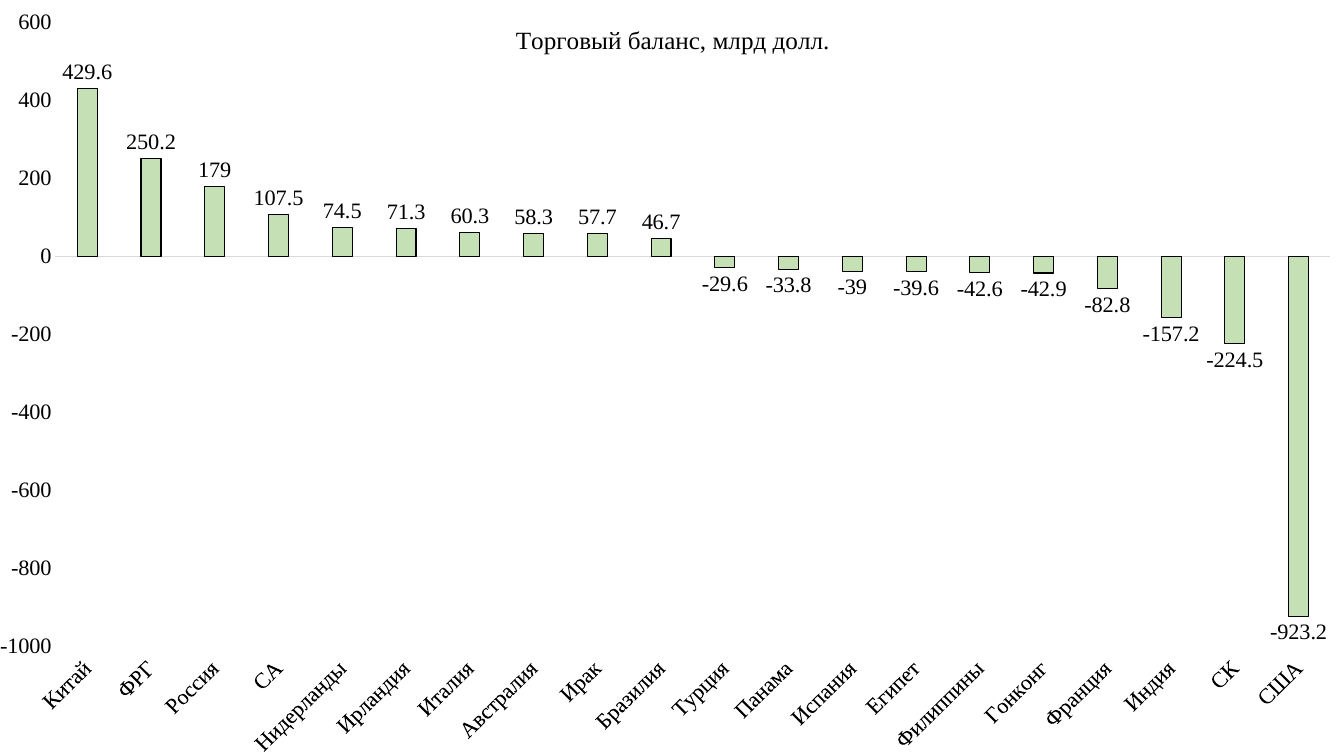
from lxml import etree
from pptx import Presentation
from pptx import util as u
from pptx.chart.data import CategoryChartData
from pptx.dml.color import RGBColor
from pptx.enum import chart as kinds
from pptx.oxml.ns import qn

COLORS = {"text": "000000", "bar": "C5E0B4", "outline": "000000", "axis": "D9D9D9"}

BALANCES = {
    "Китай": 429.6, "ФРГ": 250.2, "Россия": 179, "СА": 107.5,
    "Нидерланды": 74.5, "Ирландия": 71.3, "Италия": 60.3,
    "Австралия": 58.3, "Ирак": 57.7, "Бразилия": 46.7,
    "Турция": -29.6, "Панама": -33.8, "Испания": -39, "Египет": -39.6,
    "Филиппины": -42.6, "Гонконг": -42.9, "Франция": -82.8,
    "Индия": -157.2, "СК": -224.5, "США": -923.2,
}


class ChartPage:
    """Holds the style and the current slide."""

    font_name = "Times New Roman"
    text_size = 16
    title_size = 18

    def __init__(self, deck):
        self.page = deck.slides.add_slide(deck.slide_layouts[6])

    def color(self, name):
        return RGBColor.from_string(COLORS[name])

    def style_font(self, font, size=text_size):
        font.name = self.font_name
        font.size = u.Pt(size)
        font.bold = False
        font.color.rgb = self.color("text")

    def style_line(self, line, name):
        line.color.rgb = self.color(name)
        line.width = u.Pt(0.75)

    def add_columns(self, values, width, height):
        data = CategoryChartData()
        data.categories = list(values)
        data.add_series("Series 1", list(values.values()))
        frame = self.page.shapes.add_chart(
            kinds.XL_CHART_TYPE.COLUMN_CLUSTERED, 0, 0, width, height, data)
        chart = frame.chart
        chart.has_legend = False
        self.style_font(chart.font)

        # Columns
        plot = chart.plots[0]
        plot.gap_width = 219
        plot.overlap = -27
        plot.vary_by_categories = False
        series = plot.series[0]
        series.invert_if_negative = False
        series.format.fill.solid()
        series.format.fill.fore_color.rgb = self.color("bar")
        self.style_line(series.format.line, "outline")

        # Value labels
        labels = series.data_labels
        labels.show_value = True
        labels.position = kinds.XL_LABEL_POSITION.OUTSIDE_END
        self.style_font(labels.font)
        return chart

    def add_title(self, chart, words):
        frame = chart.chart_title.text_frame
        frame.text = words
        self.style_font(frame.paragraphs[0].runs[0].font, self.title_size)
        # The title lies over the plot
        for overlay in chart.chart_title._element.findall(qn("c:overlay")):
            overlay.set("val", "1")

    def style_axes(self, chart):
        for axis in (chart.category_axis, chart.value_axis):
            axis.has_major_gridlines = False
            axis.major_tick_mark = kinds.XL_TICK_MARK.NONE
            axis.minor_tick_mark = kinds.XL_TICK_MARK.NONE
            self.style_font(axis.tick_labels.font)
        countries, amounts = chart.category_axis, chart.value_axis
        countries.tick_label_position = kinds.XL_TICK_LABEL_POSITION.LOW
        self.style_line(countries.format.line, "axis")
        # Slanted country names: -45 degrees
        body = countries._element.find(qn("c:txPr")).find(qn("a:bodyPr"))
        body.set("rot", "-2700000")
        body.set("vert", "horz")
        amounts.minimum_scale, amounts.maximum_scale = -1000, 600
        amounts.major_unit = 200
        amounts.format.line.fill.background()

    def place_plot(self, chart, **fractions):
        area = chart._chartSpace.chart.plotArea
        for old in area.findall(qn("c:layout")):
            area.remove(old)
        layout = etree.Element(qn("c:layout"))
        manual = etree.SubElement(layout, qn("c:manualLayout"))
        settings = {"layoutTarget": "inner", "xMode": "edge", "yMode": "edge"}
        for tag, value in {**settings, **fractions}.items():
            etree.SubElement(manual, qn(f"c:{tag}")).set("val", str(value))
        area.insert(0, layout)


def main():
    deck = Presentation()
    deck.slide_width = u.Inches(13.33)
    deck.slide_height = u.Inches(7.5)
    page = ChartPage(deck)

    # Full-page trade balance chart
    chart = page.add_columns(BALANCES, deck.slide_width, deck.slide_height)
    page.add_title(chart, "Торговый баланс, млрд долл.")
    page.style_axes(chart)
    page.place_plot(chart, x=0.04, y=0.03, w=0.95, h=0.84)

    deck.save("out.pptx")


if __name__ == "__main__":
    main()
